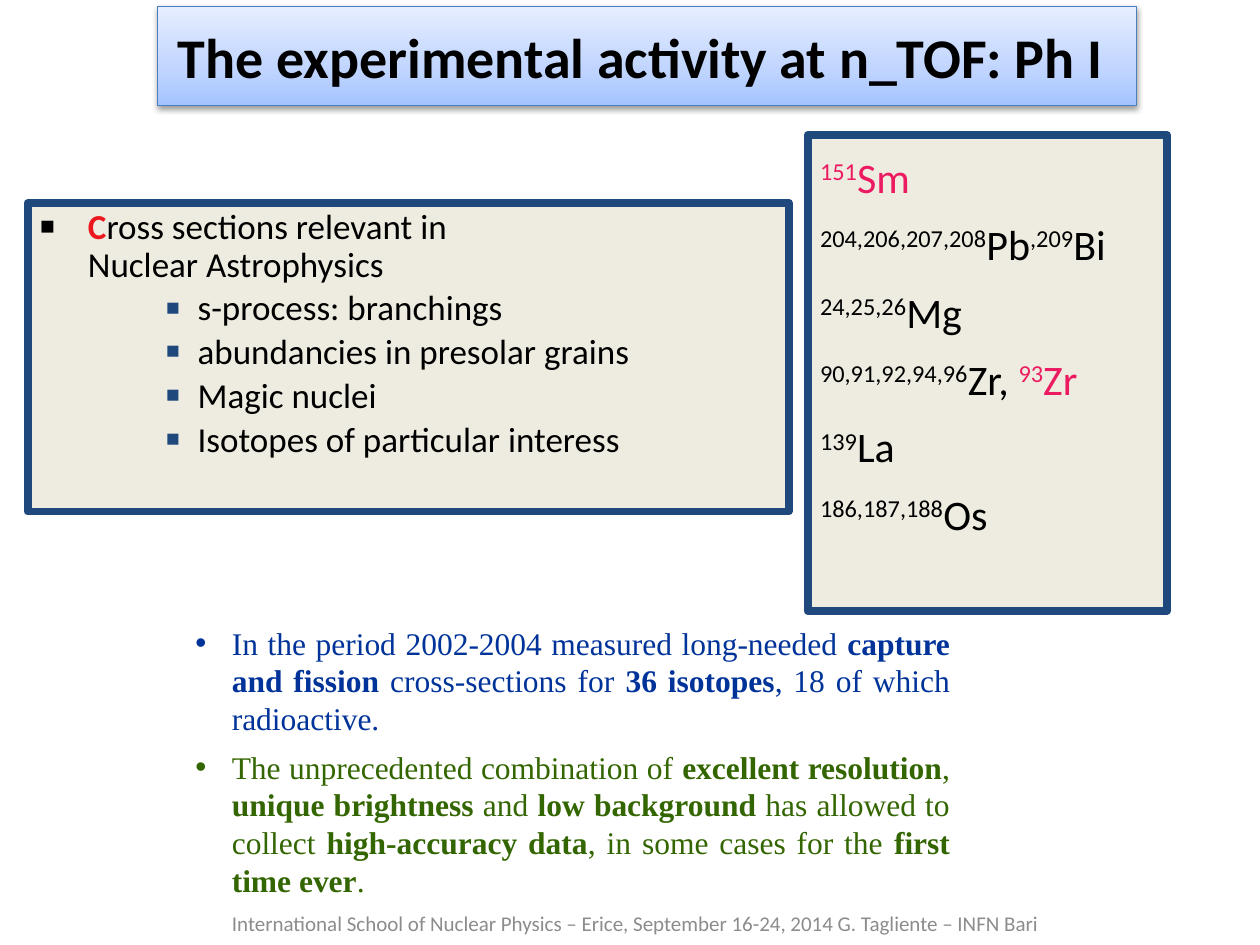
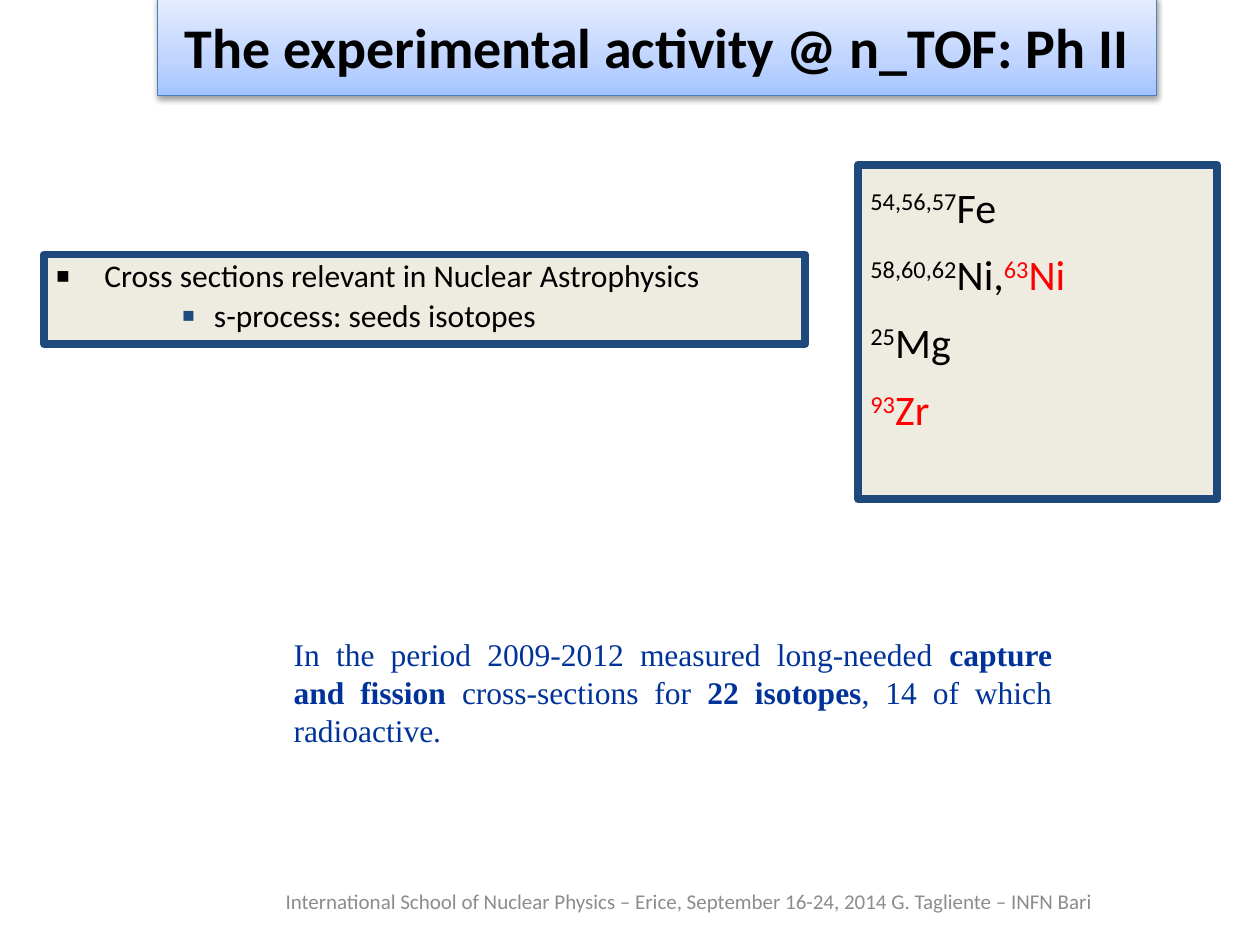
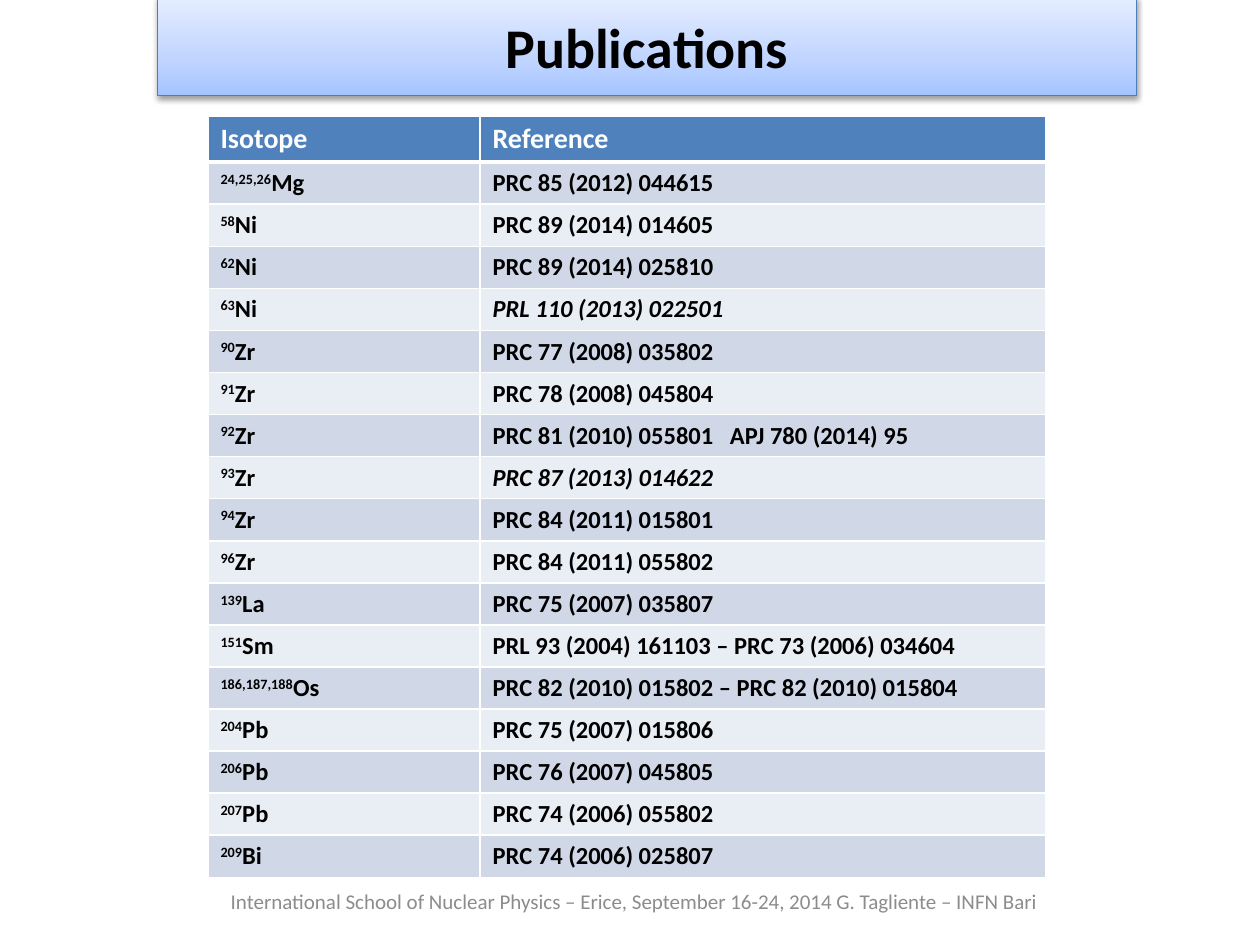
"""Build three slides on the n_TOF experimental activity and its publications."""
import pptx
import pptx.dml.color
import pptx.enum.shapes
import pptx.enum.text
import pptx.oxml
import pptx.util

Inches = pptx.util.Inches
Pt = pptx.util.Pt
RGBColor = pptx.dml.color.RGBColor
ALIGN = pptx.enum.text.PP_ALIGN
ANCHOR = pptx.enum.text.MSO_ANCHOR
RECTANGLE = pptx.enum.shapes.MSO_SHAPE.RECTANGLE

BLACK = RGBColor(0x00, 0x00, 0x00)
WHITE = RGBColor(0xFF, 0xFF, 0xFF)
CREAM = RGBColor(0xEE, 0xEC, 0xE1)
NAVY = RGBColor(0x1F, 0x49, 0x7D)
PINK = RGBColor(0xEC, 0x1A, 0x60)
CRIMSON = RGBColor(0xED, 0x18, 0x1E)
RED = RGBColor(0xFF, 0x00, 0x00)
BLUE = RGBColor(0x00, 0x33, 0x99)
GREEN = RGBColor(0x33, 0x66, 0x00)
GREY = RGBColor(0x8C, 0x8C, 0x8C)
HEADER_BLUE = RGBColor(0x4F, 0x81, 0xBD)
BAND_DARK = RGBColor(0xD0, 0xD8, 0xE8)
BAND_LIGHT = RGBColor(0xE9, 0xED, 0xF4)

SANS = "Calibri"
SERIF = "Times New Roman"
FOOTER = "International School of Nuclear Physics – Erice, September 16-24, 2014 G. Tagliente – INFN Bari"
DRAWING = 'xmlns:a="http://schemas.openxmlformats.org/drawingml/2006/main"'
TITLE_STYLE = (
    f'<a:prstGeom {DRAWING} prst="roundRect"><a:avLst/></a:prstGeom>',
    f'<a:gradFill {DRAWING} rotWithShape="1"><a:gsLst>'
    '<a:gs pos="0"><a:srgbClr val="A4C4FF"/></a:gs>'
    '<a:gs pos="35000"><a:srgbClr val="BFD4FF"/></a:gs>'
    '<a:gs pos="100000"><a:srgbClr val="E6EEFF"/></a:gs>'
    '</a:gsLst><a:lin ang="16200000" scaled="1"/></a:gradFill>',
    f'<a:ln {DRAWING} w="9525"><a:solidFill><a:srgbClr val="4B7EBC"/></a:solidFill></a:ln>',
    f'<a:effectLst {DRAWING}><a:outerShdw blurRad="40000" dist="20000" dir="5400000" rotWithShape="0">'
    '<a:srgbClr val="000000"><a:alpha val="38000"/></a:srgbClr></a:outerShdw></a:effectLst>',
)


def add_spans(para, spans, name, size, color):
    """Add (text, marks, optional colour) runs; b is bold, i italic, ^ superscript."""
    for text, marks, *own_color in spans:
        for number, line in enumerate(text.split("\n")):
            if number:
                para.add_line_break()
            span = para.add_run()
            span.text = line
            span.font.name = name
            span.font.size = Pt(size)
            span.font.bold = "b" in marks
            span.font.italic = "i" in marks
            span.font.color.rgb = own_color[0] if own_color else color
            if "^" in marks:
                span.font._element.set("baseline", "30000")


def set_indent(para, left, hang, bullet="", percent=100, color=BLACK):
    """Give a paragraph a hanging indent and, if wanted, a bullet."""
    properties = para._p.get_or_add_pPr()
    properties.set("marL", str(Inches(left)))
    properties.set("indent", str(-Inches(hang)))
    parts = ["<a:buNone {}/>"]
    if bullet:
        parts = [
            f'<a:buClr {{}}><a:srgbClr val="{color}"/></a:buClr>',
            f'<a:buSzPct {{}} val="{percent * 1000}"/>',
            '<a:buFont {} typeface="Arial"/>',
            f'<a:buChar {{}} char="{bullet}"/>',
        ]
    for part in parts:
        properties.append(pptx.oxml.parse_xml(part.format(DRAWING)))


deck = pptx.Presentation()
deck.slide_width = Inches(10)
deck.slide_height = Inches(7.5)

headings = [
    ("The experimental activity at n_TOF: Ph I ", (1.25, 0.05, 7.77, 0.79), (1.46, 7.13, 7.17, 0.4)),
    ("The experimental activity @ n_TOF: Ph II", (1.25, -0.03, 7.93, 0.79), (1.85, 6.95, 7.24, 0.4)),
    ("Publications", (1.25, -0.03, 7.77, 0.79), (1.61, 6.95, 6.85, 0.4)),
]
pages = []
for heading, title_place, footer_place in headings:
    page = deck.slides.add_slide(deck.slide_layouts[5])
    pages.append(page)

    title = page.shapes.title
    title.left, title.top, title.width, title.height = map(Inches, title_place)
    for style in TITLE_STYLE:
        title._element.spPr.append(pptx.oxml.parse_xml(style))
    title.text_frame.auto_size = pptx.enum.text.MSO_AUTO_SIZE.NONE
    title.text_frame.vertical_anchor = ANCHOR.MIDDLE
    para = title.text_frame.paragraphs[0]
    para.alignment = ALIGN.CENTER
    add_spans(para, [(heading, "b")], SANS, 32, BLACK)

    footer = page.shapes.add_textbox(*map(Inches, footer_place))
    footer.text_frame.word_wrap = True
    footer.text_frame.vertical_anchor = ANCHOR.MIDDLE
    para = footer.text_frame.paragraphs[0]
    para.alignment = ALIGN.CENTER
    add_spans(para, [(FOOTER, "")], SANS, 12, GREY)

isotope_panels = [
    ((6.41, 1.07, 2.85, 3.78), [
        [("151", "Sm", PINK)],
        [("204,206,207,208", "Pb", BLACK), (",209", "Bi", BLACK)],
        [("24,25,26", "Mg", BLACK)],
        [("90,91,92,94,96", "Zr, ", BLACK), ("93", "Zr", PINK)],
        [("139", "La", BLACK)],
        [("186,187,188", "Os", BLACK)],
    ]),
    ((6.81, 1.31, 2.85, 2.65), [
        [("54,56,57", "Fe", BLACK)],
        [("58,60,62", "Ni,", BLACK), ("63", "Ni", RED)],
        [("25", "Mg", BLACK)],
        [("93", "Zr", RED)],
    ]),
]
topic_panels = [
    ((0.22, 1.61, 6.04, 2.45), 20, [
        [("C", "b", CRIMSON), ("ross sections relevant in\nNuclear Astrophysics", "")],
        [("s-process: branchings", "")],
        [("abundancies in presolar grains", "")],
        [("Magic nuclei", "")],
        [("Isotopes of particular interess", "")],
    ]),
    ((0.35, 2.02, 6.04, 0.71), 18, [
        [("Cross sections relevant in Nuclear Astrophysics", "")],
        [("s-process: seeds isotopes", "")],
    ]),
]
note_panels = [
    ((1.46, 4.91, 6.17, 2.3), "•", [
        (BLUE, [("In the period 2002-2004 measured long-needed ", ""), ("capture and fission", "b"),
                (" cross-sections for ", ""), ("36 isotopes", "b"), (", 18 of which radioactive.", "")]),
        (GREEN, [("The unprecedented combination of ", ""), ("excellent resolution", "b"), (", ", ""),
                 ("unique brightness", "b"), (" and ", ""), ("low background", "b"),
                 (" has allowed to collect ", ""), ("high-accuracy data", "b"),
                 (", in some cases for the ", ""), ("first time ever", "b"), (".", "")]),
    ]),
    ((2.24, 5, 6.2, 1), "", [
        (BLUE, [("In the period 2009-2012 measured long-needed ", ""), ("capture and fission", "b"),
                (" cross-sections for ", ""), ("22 isotopes", "b"), (", 14 of which radioactive.", "")]),
    ]),
]

for page, isotopes, topics, notes in zip(pages, isotope_panels, topic_panels, note_panels):
    frames = []
    for place, fill, border in ((isotopes[0], CREAM, NAVY), (topics[0], CREAM, NAVY), (notes[0], WHITE, None)):
        box = page.shapes.add_shape(RECTANGLE, *map(Inches, place))
        box.shadow.inherit = False
        box.fill.solid()
        box.fill.fore_color.rgb = fill
        if border:
            box.line.color.rgb = border
            box.line.width = Pt(4.5)
        else:
            box.line.fill.background()
        box.text_frame.word_wrap = True
        box.text_frame.vertical_anchor = ANCHOR.TOP
        frames.append(box.text_frame)
    isotope_frame, topic_frame, note_frame = frames

    for row, nuclides in enumerate(isotopes[1]):
        para = isotope_frame.add_paragraph() if row else isotope_frame.paragraphs[0]
        para.alignment = ALIGN.LEFT
        para.line_spacing = 1.2
        para.space_before = Pt(4 if row else 0)
        set_indent(para, 0.38, 0.38)
        for mass, symbol, color in nuclides:
            add_spans(para, [(mass, "^"), (symbol, "")], SANS, 24, color)

    size = topics[1]
    for row, spans in enumerate(topics[2]):
        para = topic_frame.add_paragraph() if row else topic_frame.paragraphs[0]
        para.alignment = ALIGN.LEFT
        para.line_spacing = 0.9
        para.space_before = Pt(round(size * 0.17, 1) if row else 0)
        if row:
            para.level = 2
            set_indent(para, 1.25, 0.25, "■", 65, NAVY)
        else:
            set_indent(para, 0.38, 0.38, "■", 70)
        add_spans(para, spans, SANS, size, BLACK)

    note_frame.margin_left = note_frame.margin_right = Inches(0.09)
    note_frame.margin_top = note_frame.margin_bottom = Inches(0.04)
    bullet = notes[1]
    indent = 0.29 if bullet else 0
    for row, (color, spans) in enumerate(notes[2]):
        para = note_frame.add_paragraph() if row else note_frame.paragraphs[0]
        para.alignment = ALIGN.JUSTIFY
        para.space_before = Pt(6 if row else 0)
        set_indent(para, indent, indent, bullet, color=color)
        add_spans(para, spans, SERIF, 18, color)

publications = [
    ("24,25,26", "Mg", "PRC 85 (2012) 044615", "b"),
    ("58", "Ni", "PRC 89 (2014) 014605", "b"),
    ("62", "Ni", "PRC 89 (2014) 025810", "b"),
    ("63", "Ni", "PRL 110 (2013) 022501", "bi"),
    ("90", "Zr", "PRC 77 (2008) 035802", "b"),
    ("91", "Zr", "PRC 78 (2008) 045804", "b"),
    ("92", "Zr", "PRC 81 (2010) 055801   APJ 780 (2014) 95", "b"),
    ("93", "Zr", "PRC 87 (2013) 014622", "bi"),
    ("94", "Zr", "PRC 84 (2011) 015801", "b"),
    ("96", "Zr", "PRC 84 (2011) 055802", "b"),
    ("139", "La", "PRC 75 (2007) 035807", "b"),
    ("151", "Sm", "PRL 93 (2004) 161103 – PRC 73 (2006) 034604", "b"),
    ("186,187,188", "Os", "PRC 82 (2010) 015802 – PRC 82 (2010) 015804", "b"),
    ("204", "Pb", "PRC 75 (2007) 015806", "b"),
    ("206", "Pb", "PRC 76 (2007) 045805", "b"),
    ("207", "Pb", "PRC 74 (2006) 055802", "b"),
    ("209", "Bi", "PRC 74 (2006) 025807", "b"),
]
rows = [([("Isotope", "b")], [("Reference", "b")])]
for mass, symbol, reference, marks in publications:
    rows.append(([(mass, "b^"), (symbol, "b")], [(reference, marks)]))

frame = pages[2].shapes.add_table(len(rows), 2, Inches(1.65), Inches(0.92), Inches(6.65), Inches(6.03))
table = frame.table
for column, width in zip(table.columns, (2.16, 4.49)):
    column.width = Inches(width)
for row, contents in enumerate(rows):
    table.rows[row].height = Inches(0.32 if row else 0.34)
    for column, spans in enumerate(contents):
        cell = table.cell(row, column)
        for side in "LRTB":
            heavy = (row == 0 and side == "B") or (row == 1 and side == "T")
            cell._tc.get_or_add_tcPr().append(pptx.oxml.parse_xml(
                f'<a:ln{side} {DRAWING} w="{Pt(3 if heavy else 1)}">'
                f'<a:solidFill><a:srgbClr val="{WHITE}"/></a:solidFill></a:ln{side}>'))
        cell.fill.solid()
        if row == 0:
            cell.fill.fore_color.rgb = HEADER_BLUE
        else:
            cell.fill.fore_color.rgb = BAND_DARK if row % 2 else BAND_LIGHT
        para = cell.text_frame.paragraphs[0]
        add_spans(para, spans, SANS, 14 if row else 16, BLACK if row else WHITE)

deck.save("out.pptx")
